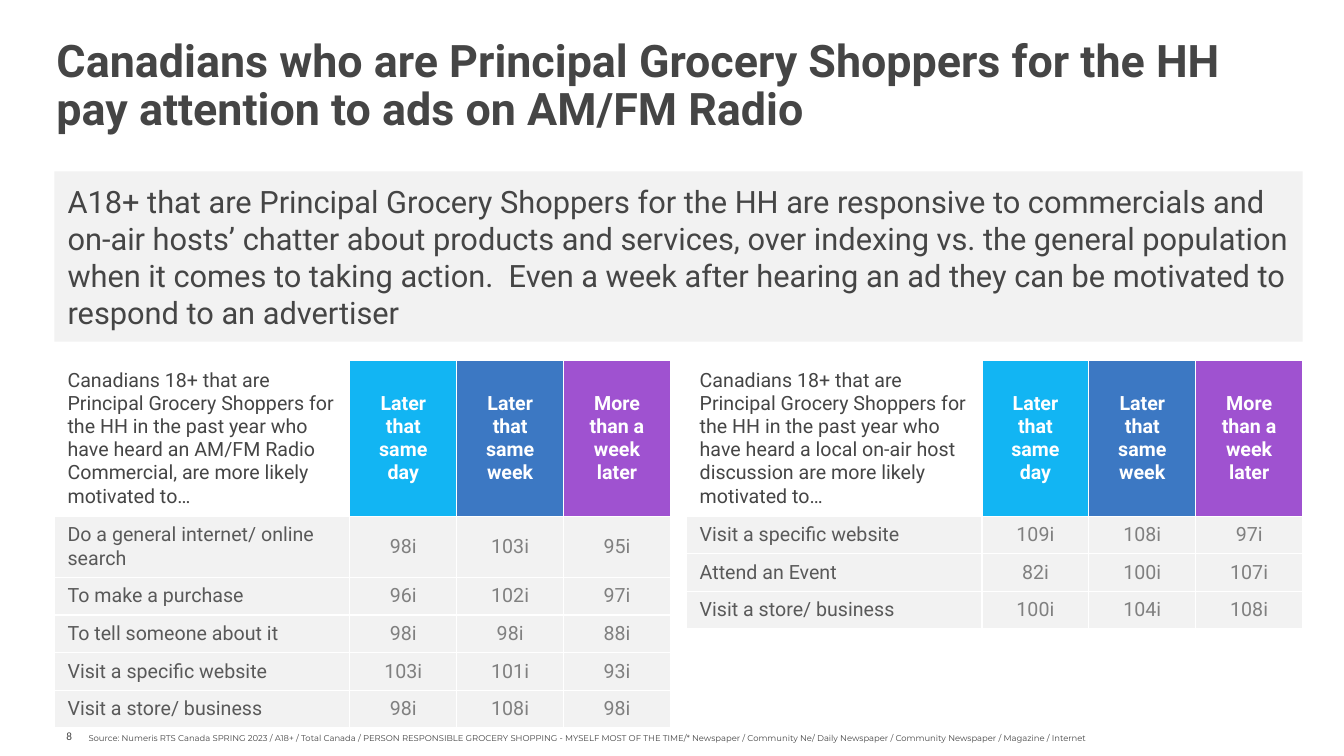
"""Build a slide on how grocery shoppers respond to radio ads."""
from lxml.etree import SubElement
from pptx import Presentation
from pptx.dml.color import RGBColor
from pptx.enum.shapes import MSO_SHAPE
from pptx.enum.text import MSO_ANCHOR, PP_ALIGN
from pptx.oxml.ns import qn
from pptx.util import Inches, Pt

TITLE = "Canadians who are Principal Grocery Shoppers for the HH pay attention to ads on AM/FM Radio"
CLAIM = (
    "A18+ that are Principal Grocery Shoppers for the HH are responsive to commercials "
    "and on-air hosts’ chatter about products and services, over indexing vs. the general "
    "population when it comes to taking action.  Even a week after hearing an ad they can "
    "be motivated to respond to an advertiser"
)
SOURCE = (
    "Source: Numeris RTS Canada SPRING 2023 / A18+ / Total Canada / PERSON RESPONSIBLE "
    "GROCERY SHOPPING - MYSELF MOST OF THE TIME/* Newspaper / Community Ne/ Daily "
    "Newspaper / Community Newspaper / Magazine / Internet"
)
INTRO = "Canadians 18+ that are Principal Grocery Shoppers for the HH in the past year who have heard "
TIMES = [
    ("Later that same day", "12B5F3"),
    ("Later that same week", "3C78C3"),
    ("More than a week later", "9F52D0"),
]
TABLES = [
    (0.54, "an AM/FM Radio Commercial, are more likely motivated to…", [
        ("Do a general internet/ online search", 0.59, (98, 103, 95)),
        ("To make a purchase", 0.36, (96, 102, 97)),
        ("To tell someone about it", 0.36, (98, 98, 88)),
        ("Visit a specific website", 0.36, (103, 101, 93)),
        ("Visit a store/ business", 0.36, (98, 108, 98)),
    ]),
    (6.81, "a local on-air host discussion are more likely motivated to…", [
        ("Visit a specific website", 0.36, (109, 108, 97)),
        ("Attend an Event", 0.36, (82, 100, 107)),
        ("Visit a store/ business", 0.36, (100, 104, 108)),
    ]),
]
INK, PALE, WHITE, GREY, DARK = "454545", "F2F2F2", "FFFFFF", "808080", "595959"
TOP, HEAD, COLS = 3.58, 1.52, (2.93, 1.06, 1.06, 1.06)
PAD = (0.13, 0.07)


def color(code):
    return RGBColor.from_string(code)


def write(frame, text, size, tint=INK, bold=False, font="Roboto", align=PP_ALIGN.LEFT):
    frame.word_wrap = True
    para = frame.paragraphs[0]
    para.alignment = align
    run = para.add_run()
    run.text = text
    run.font.size, run.font.name, run.font.bold = Pt(size), font, bold
    run.font.color.rgb = color(tint)
    return para


def inset(item, wide, high):
    item.margin_left = item.margin_right = Inches(wide)
    item.margin_top = item.margin_bottom = Inches(high)


def add_box(slide, place, text, size, anchor=MSO_ANCHOR.MIDDLE, pad=(0.1, 0.05), **style):
    frame = slide.shapes.add_textbox(*map(Inches, place)).text_frame
    frame.vertical_anchor = anchor
    inset(frame, *pad)
    return write(frame, text, size, **style)


def add_edges(cell):
    props = cell._tc.get_or_add_tcPr()
    for side in ("lnL", "lnR", "lnT", "lnB"):
        line = SubElement(props, qn("a:" + side), w=str(Pt(1)))
        fill = SubElement(line, qn("a:solidFill"))
        SubElement(fill, qn("a:srgbClr"), val=WHITE)


def fill_cell(cell, text, back, tint, bold, align):
    add_edges(cell)
    cell.fill.solid()
    cell.fill.fore_color.rgb = color(back)
    cell.vertical_anchor = MSO_ANCHOR.MIDDLE
    inset(cell, *PAD)
    write(cell.text_frame, text, 14, tint, bold, align=align)


def add_grid(slide, left, ending, rows):
    mid, start = PP_ALIGN.CENTER, PP_ALIGN.LEFT
    grid = [[(INTRO + ending, WHITE, INK, False, start)]
            + [(text, back, WHITE, True, mid) for text, back in TIMES]]
    for label, _, scores in rows:
        grid.append([(label, PALE, DARK, False, start)]
                    + [(f"{score}i", PALE, GREY, False, mid) for score in scores])
    highs = [HEAD] + [high for _, high, _ in rows]
    place = map(Inches, (left, TOP, sum(COLS), sum(highs)))
    table = slide.shapes.add_table(len(grid), len(COLS), *place).table
    table.first_row = table.horz_banding = False
    for col, wide in zip(table.columns, COLS):
        col.width = Inches(wide)
    for row, high, line in zip(table.rows, highs, grid):
        row.height = Inches(high)
        for cell, spec_row in zip(row.cells, line):
            fill_cell(cell, *spec_row)


def add_claim(slide):
    panel = slide.shapes.add_shape(MSO_SHAPE.RECTANGLE, *map(Inches, (0.54, 1.7, 12.38, 1.69)))
    panel.shadow.inherit = False
    panel.fill.solid()
    panel.fill.fore_color.rgb = color(PALE)
    panel.line.fill.background()
    panel.text_frame.vertical_anchor = MSO_ANCHOR.MIDDLE
    inset(panel.text_frame, *PAD)
    write(panel.text_frame, CLAIM, 22)


def main():
    deck = Presentation()
    deck.slide_width, deck.slide_height = Inches(13.33), Inches(7.5)
    slide = deck.slides.add_slide(deck.slide_layouts[6])
    title = add_box(slide, (0.56, 0.5, 12.2, 0.72), TITLE, 32, pad=(0, 0), bold=True)
    title.line_spacing = 0.9
    add_box(slide, (0.56, 7.1, 3, 0.4), "8", 8, font="Calibri")
    for left, ending, rows in TABLES:
        add_grid(slide, left, ending, rows)
    add_claim(slide)
    add_box(slide, (0.78, 7.22, 11.63, 0.2), SOURCE, 6, MSO_ANCHOR.TOP, font="Montserrat")
    deck.save("out.pptx")


if __name__ == "__main__":
    main()
